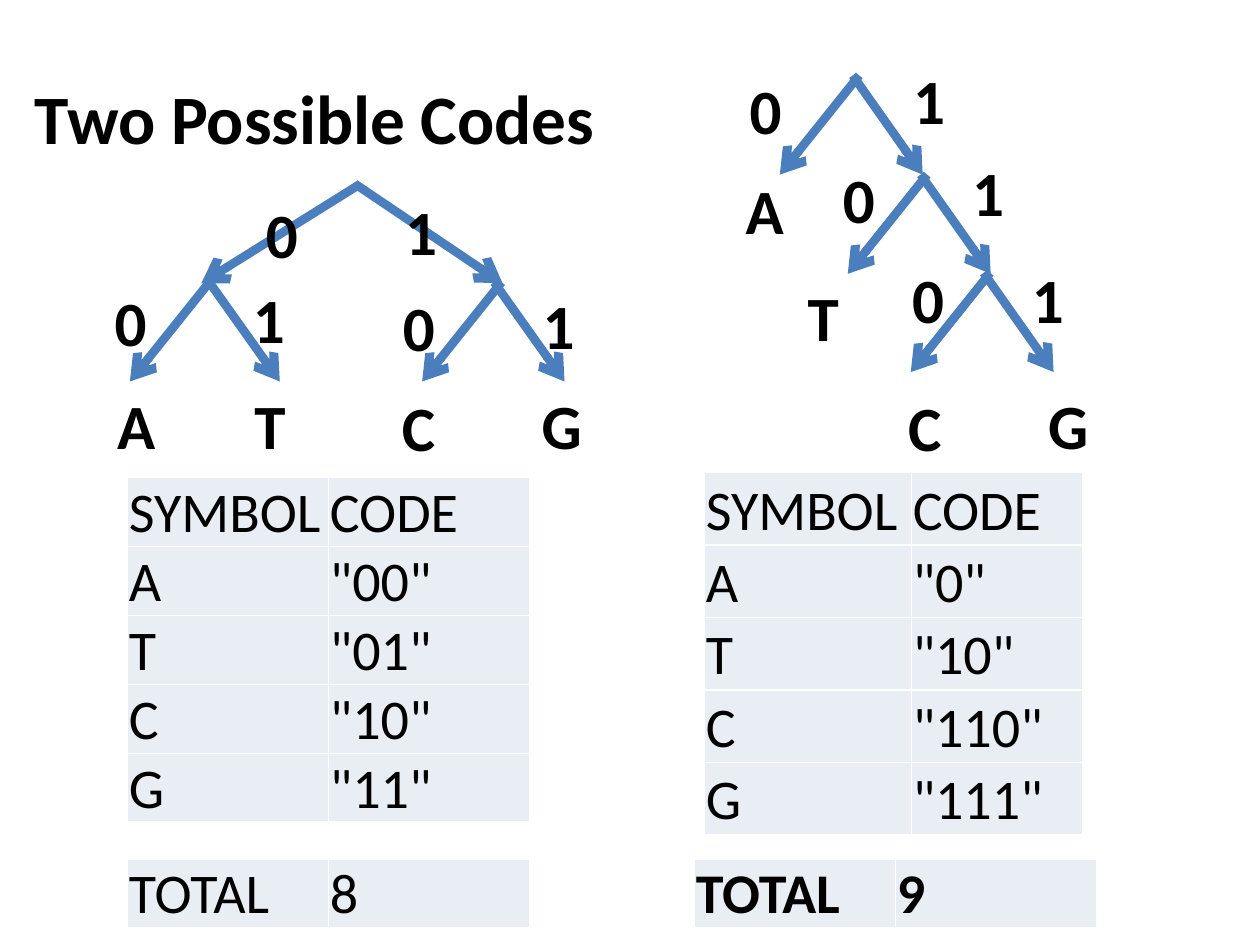
import pptx
import pptx.dml.color
import pptx.enum.shapes
import pptx.enum.text
import pptx.oxml
import pptx.oxml.ns
import pptx.util
from pptx.util import Cm

BLACK = pptx.dml.color.RGBColor(0x00, 0x00, 0x00)
WHITE = pptx.dml.color.RGBColor(0xFF, 0xFF, 0xFF)
ARROW_BLUE = pptx.dml.color.RGBColor(0x4B, 0x7E, 0xBC)
CELL_GREY = pptx.dml.color.RGBColor(0xE9, 0xED, 0xF4)

LABEL_WIDTHS = {"A": 1.3, "T": 1.14, "C": 1.19, "G": 1.32, "0": 1.17, "1": 1.17}

LEFT_FORKS = [
    (7.26, 7.16, 3.71, 3.2, 2.97),
    (4.22, 4.22, 5.69, 1.6, 1.42),
    (10.11, 9.96, 5.69, 1.6, 1.42),
]
LEFT_LABELS = [
    ("C", 7.85, 7.7), ("A", 2.11, 7.67), ("T", 4.88, 7.67), ("G", 10.67, 7.67),
    ("0", 5.11, 3.81), ("1", 7.92, 3.76), ("0", 2.06, 5.59),
    ("1", 4.85, 5.54), ("0", 7.87, 5.69), ("1", 10.69, 5.66),
]
RIGHT_FORKS = [
    (17.32, 17.19, 1.52, 1.6, 1.41),
    (18.69, 18.56, 3.52, 1.6, 1.41),
    (19.96, 19.83, 5.5, 1.6, 1.41),
]
RIGHT_LABELS = [
    ("C", 18.06, 7.7), ("A", 14.78, 3.33), ("T", 16.03, 5.49), ("G", 20.88, 7.67),
    ("0", 14.86, 1.32), ("1", 20.55, 5.13), ("0", 16.74, 3.12),
    ("0", 18.14, 5.13), ("1", 19.35, 2.97), ("1", 18.16, 1.12),
]
HEADER = ("SYMBOL", "CODE")
FIXED_CODE = [HEADER, ("A", '"00"'), ("T", '"01"'), ("C", '"10"'), ("G", '"11"')]
VARIABLE_CODE = [HEADER, ("A", '"0"'), ("T", '"10"'), ("C", '"110"'), ("G", '"111"')]


class CodeSlide:
    font_name = "Calibri"
    label_size = 36
    table_size = 32
    branch_drop = 2

    def __init__(self, presentation):
        self.slide = presentation.slides.add_slide(presentation.slide_layouts[6])

    def format_text(self, text_frame, size, bold):
        for paragraph in text_frame.paragraphs:
            for run in paragraph.runs:
                run.font.name = self.font_name
                run.font.size = pptx.util.Pt(size)
                run.font.bold = bold
                run.font.color.rgb = BLACK

    def title(self, text, left, top, width, height):
        shape = self.slide.shapes.add_textbox(Cm(left), Cm(top), Cm(width), Cm(height))
        text_frame = shape.text_frame
        text_frame.word_wrap = True
        text_frame.vertical_anchor = pptx.enum.text.MSO_ANCHOR.MIDDLE
        text_frame.text = text
        text_frame.paragraphs[0].alignment = pptx.enum.text.PP_ALIGN.CENTER
        self.format_text(text_frame, 39.6, True)

    def label(self, shapes, text, left, top):
        shape = shapes.add_textbox(Cm(left), Cm(top), Cm(LABEL_WIDTHS[text]), Cm(1.8))
        text_frame = shape.text_frame
        text_frame.word_wrap = False
        text_frame.auto_size = pptx.enum.text.MSO_AUTO_SIZE.SHAPE_TO_FIT_TEXT
        text_frame.text = text
        self.format_text(text_frame, self.label_size, True)

    def arrow(self, shapes, start_x, start_y, end_x, end_y):
        connector = shapes.add_connector(
            pptx.enum.shapes.MSO_CONNECTOR.STRAIGHT,
            Cm(start_x), Cm(start_y), Cm(end_x), Cm(end_y),
        )
        connector.line.color.rgb = ARROW_BLUE
        connector.line.width = pptx.util.Pt(5)
        line = connector.line._get_or_add_ln()
        pptx.oxml.ns.qn("a:tailEnd")
        line.append(self.element('<a:tailEnd {} type="arrow"/>'))
        connector._element.spPr.append(self.element("<a:effectLst {}/>"))

    def element(self, template):
        return pptx.oxml.parse_xml(template.format(pptx.oxml.ns.nsdecls("a")))

    def tree(self, forks, labels):
        shapes = self.slide.shapes.add_group_shape().shapes
        for left_start, right_start, top, left_reach, right_reach in forks:
            bottom = top + self.branch_drop
            self.arrow(shapes, left_start, top, left_start - left_reach, bottom)
            self.arrow(shapes, right_start, top, right_start + right_reach, bottom)
        for text, left, top in labels:
            self.label(shapes, text, left, top)

    def table(self, rows, left, top, column_widths, row_height, bold=False):
        table = self.slide.shapes.add_table(
            len(rows), len(column_widths), Cm(left), Cm(top),
            Cm(sum(column_widths)), Cm(row_height * len(rows)),
        ).table
        table.first_row = False
        table.horz_banding = False
        for column, width in zip(table.columns, column_widths):
            column.width = Cm(width)
        for row, texts in zip(table.rows, rows):
            row.height = Cm(row_height)
            for cell, text in zip(row.cells, texts):
                self.cell(cell, text, bold)

    def cell(self, cell, text, bold):
        cell.margin_left = cell.margin_right = cell.margin_top = Cm(0.03)
        cell.margin_bottom = 0
        cell.vertical_anchor = pptx.enum.text.MSO_ANCHOR.BOTTOM
        properties = cell._tc.get_or_add_tcPr()
        for side in ("lnL", "lnR", "lnT", "lnB"):
            properties.append(self.element(
                f'<a:{side} {{}} w="12700"><a:solidFill><a:srgbClr val="{WHITE}"/>'
                f"</a:solidFill></a:{side}>"
            ))
        cell.fill.solid()
        cell.fill.fore_color.rgb = CELL_GREY
        cell.text_frame.text = text
        self.format_text(cell.text_frame, self.table_size, bold)


def main():
    presentation = pptx.Presentation()
    presentation.slide_width = Cm(25.4)
    presentation.slide_height = Cm(19.05)
    code_slide = CodeSlide(presentation)
    code_slide.title("Two Possible Codes", 0, 0.76, 12.7, 3.18)
    code_slide.tree(LEFT_FORKS, LEFT_LABELS)
    code_slide.tree(RIGHT_FORKS, RIGHT_LABELS)
    code_slide.table(FIXED_CODE, 2.57, 9.63, (4.05, 4.05), 1.39)
    code_slide.table(VARIABLE_CODE, 14.2, 9.53, (4.17, 3.45), 1.46)
    code_slide.table([("TOTAL", "8")], 2.57, 17.32, (4.05, 4.05), 1.39)
    code_slide.table([("TOTAL", "9")], 14, 17.32, (4.05, 4.05), 1.39, bold=True)
    presentation.save("out.pptx")


if __name__ == "__main__":
    main()
